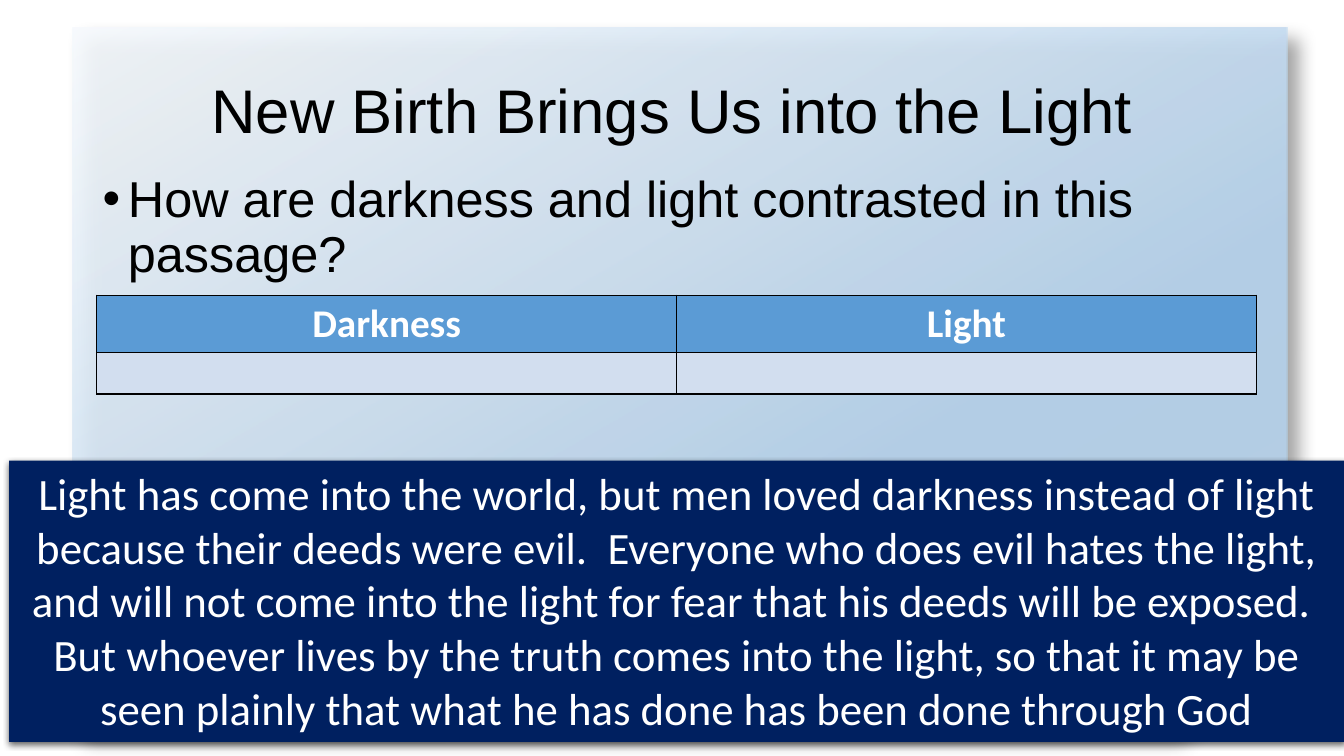
"""Build the slide on darkness and light."""
from pptx import Presentation
from pptx.dml.color import RGBColor
from pptx.enum.shapes import MSO_SHAPE as Shape
from pptx.enum.text import MSO_ANCHOR as Anchor, PP_ALIGN as Align
from pptx.oxml import parse_xml
from pptx.oxml.ns import nsdecls, qn
from pptx.util import Inches, Pt

TITLE = "New Birth Brings Us into the Light"
QUESTION = "How are darkness and light contrasted in this passage?"
VERSE = (
    "Light has come into the world, but men loved darkness instead of light "
    "because their deeds were evil.  Everyone who does evil hates the light, "
    "and will not come into the light for fear that his deeds will be exposed.  "
    "But whoever lives by the truth comes into the light, so that it may be "
    "seen plainly that what he has done has been done through God"
)
ROWS = [("Darkness", "Light"), ("", "")]
HEIGHTS = [0.57, 0.41]
COL = 5.75
STOPS = [(0, "F7FAFD", 90), (64, "B5D2EC", 90), (83, "B5D2EC", 89), (100, "CEE1F2", 87)]

BLACK = RGBColor(0x00, 0x00, 0x00)
WHITE = RGBColor(0xFF, 0xFF, 0xFF)
NAVY = RGBColor(0x00, 0x20, 0x60)
BLUE = RGBColor(0x5B, 0x9B, 0xD5)
PALE = RGBColor(0xD2, 0xDE, 0xEF)


def write(frame, text, size, font="Arial", color=BLACK, bold=False,
          align=Align.CENTER, anchor=Anchor.TOP, spacing=None, bullet=False):
    frame.word_wrap = True
    frame.vertical_anchor = anchor
    para = frame.paragraphs[0]
    para.alignment = align
    para.line_spacing = spacing
    if bullet:
        props = para._p.get_or_add_pPr()
        props.set("marL", str(Inches(0.25)))
        props.set("indent", str(-Inches(0.25)))
        props.append(parse_xml(f'<a:buFont {nsdecls("a")} typeface="Arial"/>'))
        props.append(parse_xml(f'<a:buChar {nsdecls("a")} char="•"/>'))
    run = para.add_run()
    run.text = text
    run.font.size = Pt(size)
    run.font.name = font
    run.font.bold = bold
    run.font.color.rgb = color


def add_box(slide, kind, place):
    box = slide.shapes.add_shape(kind, *map(Inches, place))
    box.line.fill.background()
    return box


def cast(shape, alpha, blur, dist, angle):
    shape.shadow.inherit = False
    shape._element.spPr.find(qn("a:effectLst")).append(parse_xml(
        f'<a:outerShdw {nsdecls("a")} blurRad="{Pt(blur)}" dist="{Pt(dist)}" '
        f'dir="{angle * 60000}" algn="tl" rotWithShape="0"><a:srgbClr val="000000">'
        f'<a:alpha val="{alpha * 1000}"/></a:srgbClr></a:outerShdw>'))


def shade(shape, angle):
    stops = "".join(
        f'<a:gs pos="{pos * 1000}"><a:srgbClr val="{color}">'
        f'<a:alpha val="{alpha * 1000}"/></a:srgbClr></a:gs>'
        for pos, color, alpha in STOPS)
    shape.fill.background()
    props = shape._element.spPr
    props.replace(props.find(qn("a:noFill")), parse_xml(
        f'<a:gradFill {nsdecls("a")} rotWithShape="1"><a:gsLst>{stops}</a:gsLst>'
        f'<a:lin ang="{angle * 60000}" scaled="0"/></a:gradFill>'))


def frame_cell(cell):
    props = cell._tc.get_or_add_tcPr()
    for i, side in enumerate(("lnL", "lnR", "lnT", "lnB")):
        props.insert(i, parse_xml(
            f'<a:{side} {nsdecls("a")} w="{Pt(1)}"><a:solidFill>'
            f'<a:srgbClr val="{BLACK}"/></a:solidFill></a:{side}>'))


def add_grid(slide, left, top):
    table = slide.shapes.add_table(
        len(ROWS), 2, Inches(left), Inches(top),
        Inches(2 * COL), Inches(sum(HEIGHTS))).table
    for col in table.columns:
        col.width = Inches(COL)
    for r, (row, high) in enumerate(zip(ROWS, HEIGHTS)):
        table.rows[r].height = Inches(high)
        for c, text in enumerate(row):
            cell = table.cell(r, c)
            cell.fill.solid()
            cell.fill.fore_color.rgb = PALE if r else BLUE
            frame_cell(cell)
            if text:
                write(cell.text_frame, text, 28, font="Calibri", color=WHITE, bold=True)


def main():
    deck = Presentation()
    deck.slide_width, deck.slide_height = Inches(13.33), Inches(7.5)
    slide = deck.slides.add_slide(deck.slide_layouts[6])

    panel = add_box(slide, Shape.FOLDED_CORNER, (0.72, 0.27, 12.05, 6.97))
    shade(panel, 60)
    cast(panel, 40, 13, 13, 45)

    title = slide.shapes.add_textbox(*map(Inches, (0.92, 0.4, 11.5, 1.45)))
    write(title.text_frame, TITLE, 44, anchor=Anchor.MIDDLE, spacing=0.9)
    body = slide.shapes.add_textbox(*map(Inches, (0.92, 1.68, 11.5, 5.07)))
    write(body.text_frame, QUESTION, 36, align=Align.LEFT, spacing=0.9, bullet=True)

    verse = add_box(slide, Shape.RECTANGLE, (0.09, 4.57, 13.25, 2.79))
    verse.fill.solid()
    verse.fill.fore_color.rgb = NAVY
    cast(verse, 63, 4.5, 1.5, 90)
    write(verse.text_frame, VERSE, 32, font="Calibri", color=WHITE)

    add_grid(slide, 0.96, 2.93)
    deck.save("out.pptx")


if __name__ == "__main__":
    main()
